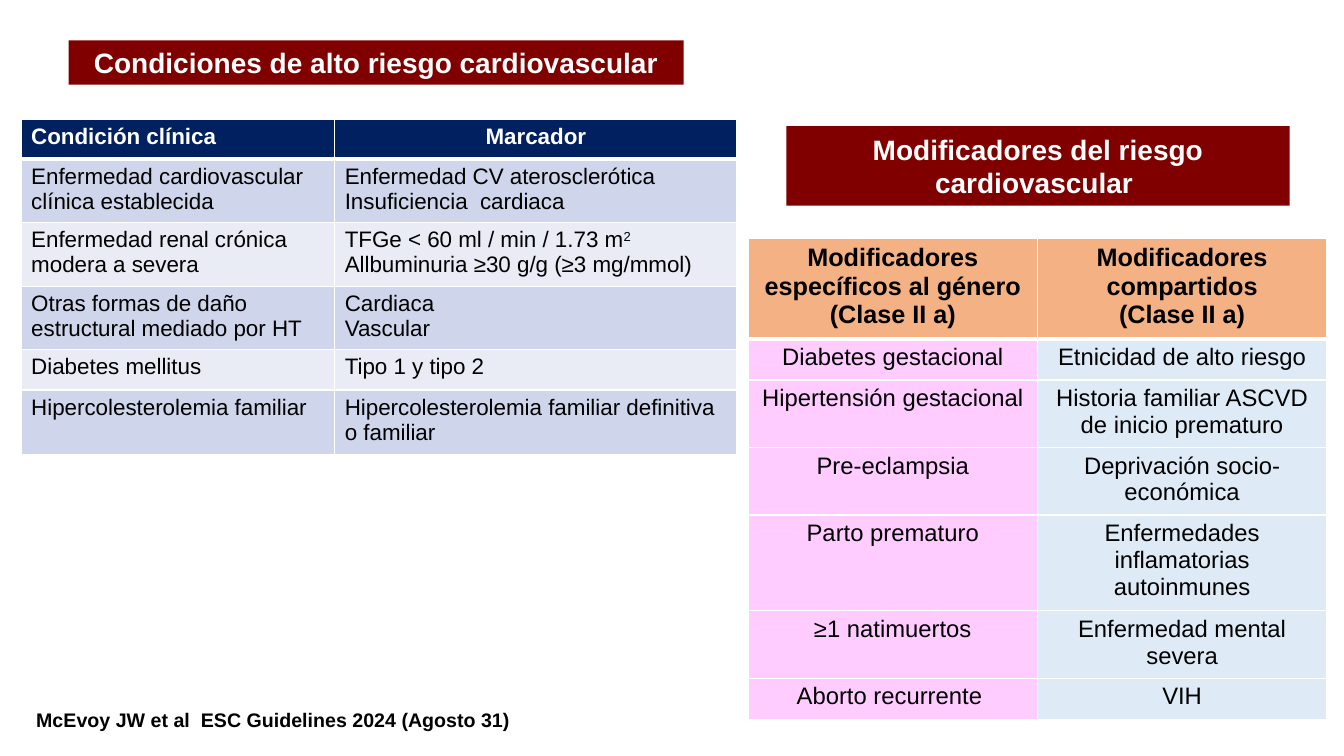
from lxml import etree
from pptx import Presentation, util as u
from pptx.dml.color import RGBColor
from pptx.enum import shapes, text
from pptx.oxml.ns import qn

PX = 9144  # 100 px to the inch
FONT = "Arial"
WHITE, BLACK, MAROON, NAVY = "FFFFFF", "000000", "800000", "002060"
CENTER, LEFT = text.PP_ALIGN.CENTER, text.PP_ALIGN.LEFT

# Text after "^" is superscript; "\n" starts a new paragraph.
TITLE = ("Condiciones de alto riesgo cardiovascular", (68, 40, 610, 44), 20, WHITE, MAROON)
BOXES = [
    ("McEvoy JW et al  ESC Guidelines 2024 (Agosto 31)", (25, 697, 492, 34), 14, BLACK, WHITE),
    ("Modificadores del riesgo\ncardiovascular ", (780, 125, 499, 79), 20, WHITE, MAROON),
]
CONDITIONS = {
    "at": (21, 118), "columns": (311, 399), "heights": (40, 63, 63, 63, 40, 64),
    "sizes": (16, 16), "header": (WHITE, NAVY), "header_align": (LEFT, CENTER), "align": LEFT,
    "fills": (("CFD5EA", "CFD5EA"), ("E9EBF5", "E9EBF5")),
    "rows": [
        ("Condición clínica", "Marcador"),
        ("Enfermedad cardiovascular clínica establecida",
         "Enfermedad CV aterosclerótica\nInsuficiencia  cardiaca"),
        ("Enfermedad renal crónica modera a severa",
         "TFGe < 60 ml / min / 1.73 m^2\nAllbuminuria ≥30 g/g (≥3 mg/mmol)"),
        ("Otras formas de daño estructural mediado por HT", "Cardiaca\nVascular"),
        ("Diabetes mellitus", "Tipo 1 y tipo 2"),
        ("Hipercolesterolemia familiar", "Hipercolesterolemia familiar definitiva o familiar"),
    ],
}
MODIFIERS = {
    "at": (742, 237), "columns": (287, 287), "heights": (99, 41, 67, 67, 95, 67, 41),
    "sizes": (18, 17), "header": (BLACK, "F4B183"), "header_align": (CENTER, CENTER), "align": CENTER,
    "fills": (("FFCCFF", "DEEBF7"),),
    "rows": [
        ("Modificadores específicos al género\n(Clase II a)", "Modificadores compartidos\n(Clase II a)"),
        ("Diabetes gestacional", "Etnicidad de alto riesgo"),
        ("Hipertensión gestacional", "Historia familiar ASCVD de inicio prematuro"),
        ("Pre-eclampsia", "Deprivación socio-económica"),
        ("Parto prematuro", "Enfermedades inflamatorias autoinmunes"),
        ("≥1 natimuertos", "Enfermedad mental severa"),
        ("Aborto recurrente ", "VIH"),
    ],
}


def color(value):
    return RGBColor.from_string(value)


def paint(item, value):
    item.fill.solid()
    item.fill.fore_color.rgb = color(value)


def write(frame, content, size, ink, bold, align):
    frame.word_wrap = True
    for index, line in enumerate(content.split("\n")):
        para = frame.paragraphs[0] if index == 0 else frame.add_paragraph()
        para.alignment = align
        for raised, part in enumerate(line.split("^")):
            span = para.add_run()
            span.text = part
            for name, value in {"name": FONT, "size": u.Pt(size), "bold": bold}.items():
                setattr(span.font, name, value)
            span.font.color.rgb = color(ink)
            if raised:
                span.font._element.set("baseline", "30000")


def fill_box(box, content, at, size, ink, back):
    box.left, box.top, box.width, box.height = (v * PX for v in at)
    paint(box, back)
    box.text_frame.auto_size = text.MSO_AUTO_SIZE.NONE
    box.text_frame.vertical_anchor = text.MSO_ANCHOR.MIDDLE
    write(box.text_frame, content, size, ink, True, CENTER)


def add_borders(cell, row):
    """White rules, thicker between the header and the body."""
    points = {"L": 1, "R": 1, "T": 3 if row == 1 else 1, "B": 3 if row == 0 else 1}
    for side, width in points.items():
        line = etree.SubElement(cell._tc.get_or_add_tcPr(), qn(f"a:ln{side}"), w=str(u.Pt(width)))
        solid = etree.SubElement(line, qn("a:solidFill"))
        etree.SubElement(solid, qn("a:srgbClr"), val=WHITE)


def add_risk_table(page, data):
    rows, widths, heights = data["rows"], data["columns"], data["heights"]
    size = (sum(widths), sum(heights))
    table = page.shapes.add_table(len(rows), len(widths), *(v * PX for v in data["at"] + size)).table
    for column, width in zip(table.columns, widths):
        column.width = width * PX
    for r, (row, height) in enumerate(zip(rows, heights)):
        table.rows[r].height = height * PX
        for c, content in enumerate(row):
            cell = table.cell(r, c)
            add_borders(cell, r)
            if r == 0:
                ink, back = data["header"]
                align = data["header_align"][c]
            else:
                ink, align = BLACK, data["align"]
                back = data["fills"][(r - 1) % len(data["fills"])][c]
            paint(cell, back)
            write(cell.text_frame, content, data["sizes"][r > 0], ink, r == 0, align)


def main():
    deck = Presentation()
    deck.slide_width, deck.slide_height = u.Inches(13.33), u.Inches(7.5)
    page = deck.slides.add_slide(deck.slide_layouts[5])
    fill_box(page.shapes.title, *TITLE)
    for entry in BOXES:
        box = page.shapes.add_shape(shapes.MSO_SHAPE.RECTANGLE, 0, 0, PX, PX)
        box.shadow.inherit = False
        box.line.fill.background()
        fill_box(box, *entry)
    for data in (CONDITIONS, MODIFIERS):
        add_risk_table(page, data)
    deck.save("out.pptx")


if __name__ == "__main__":
    main()
